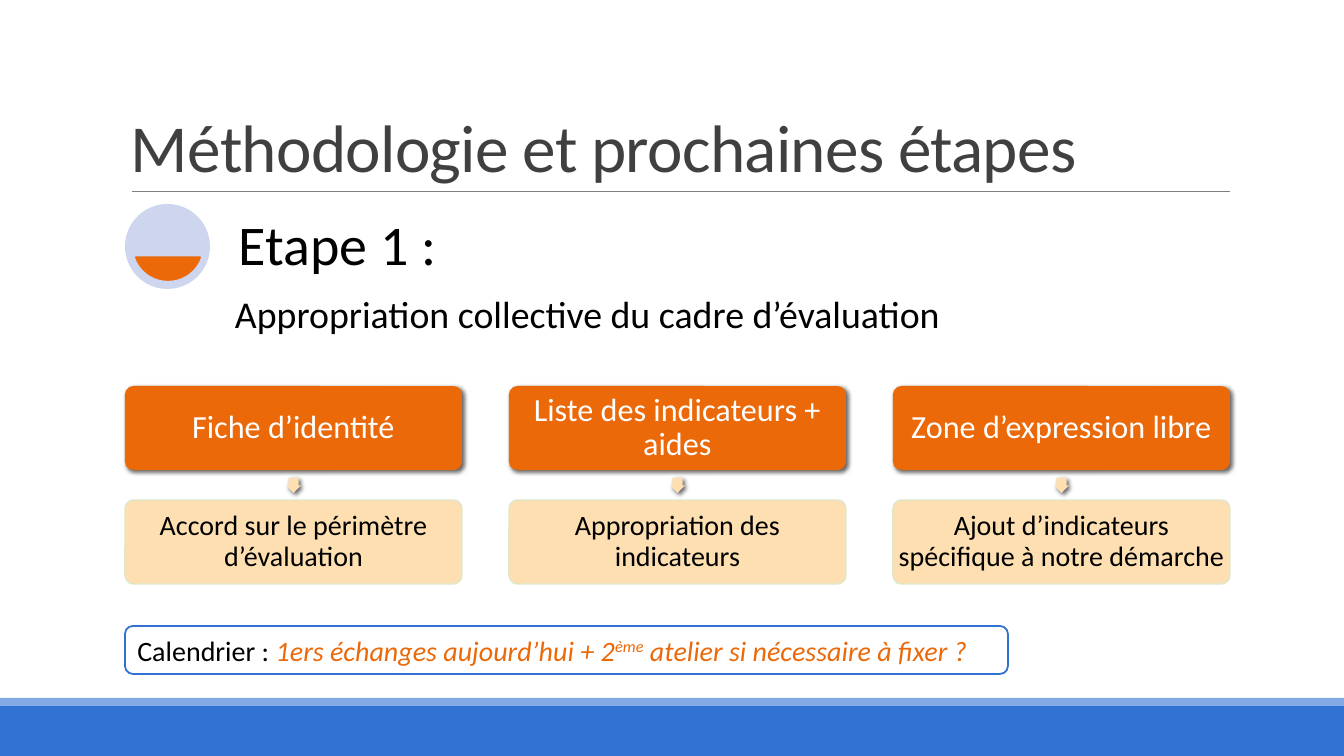
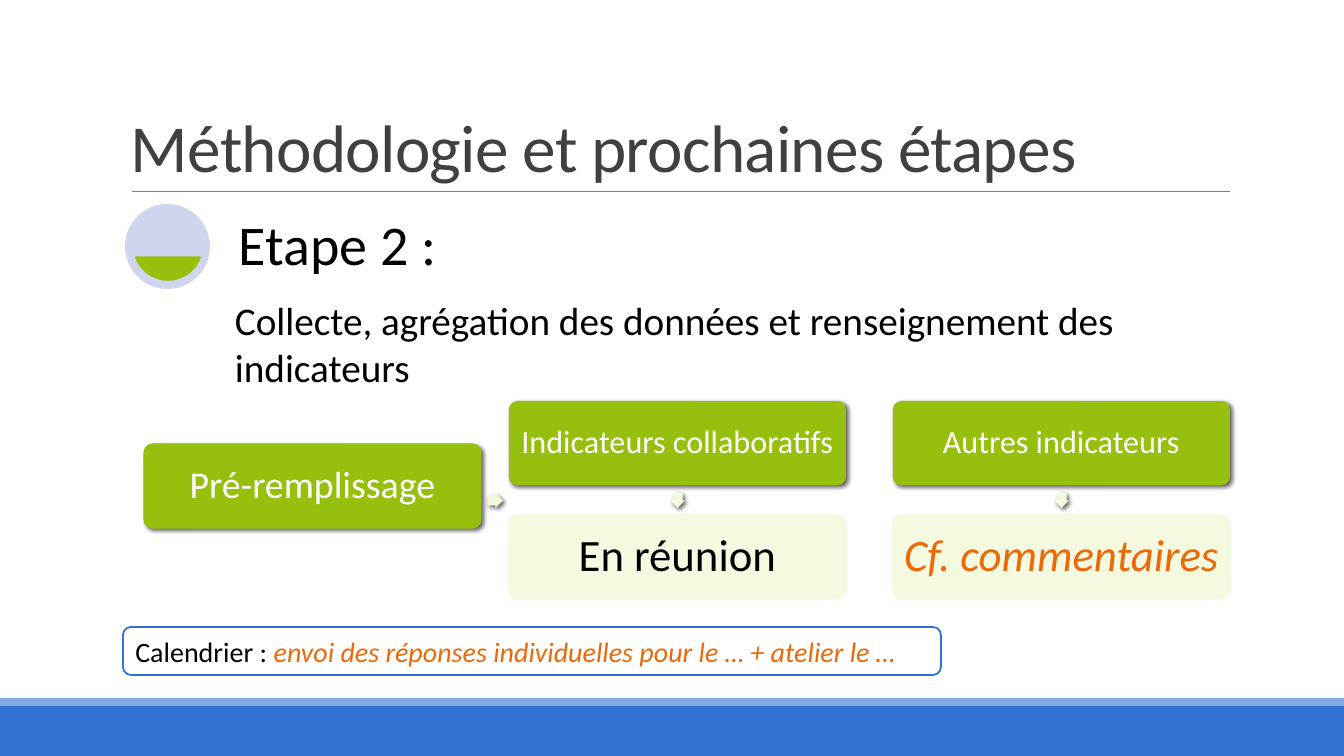
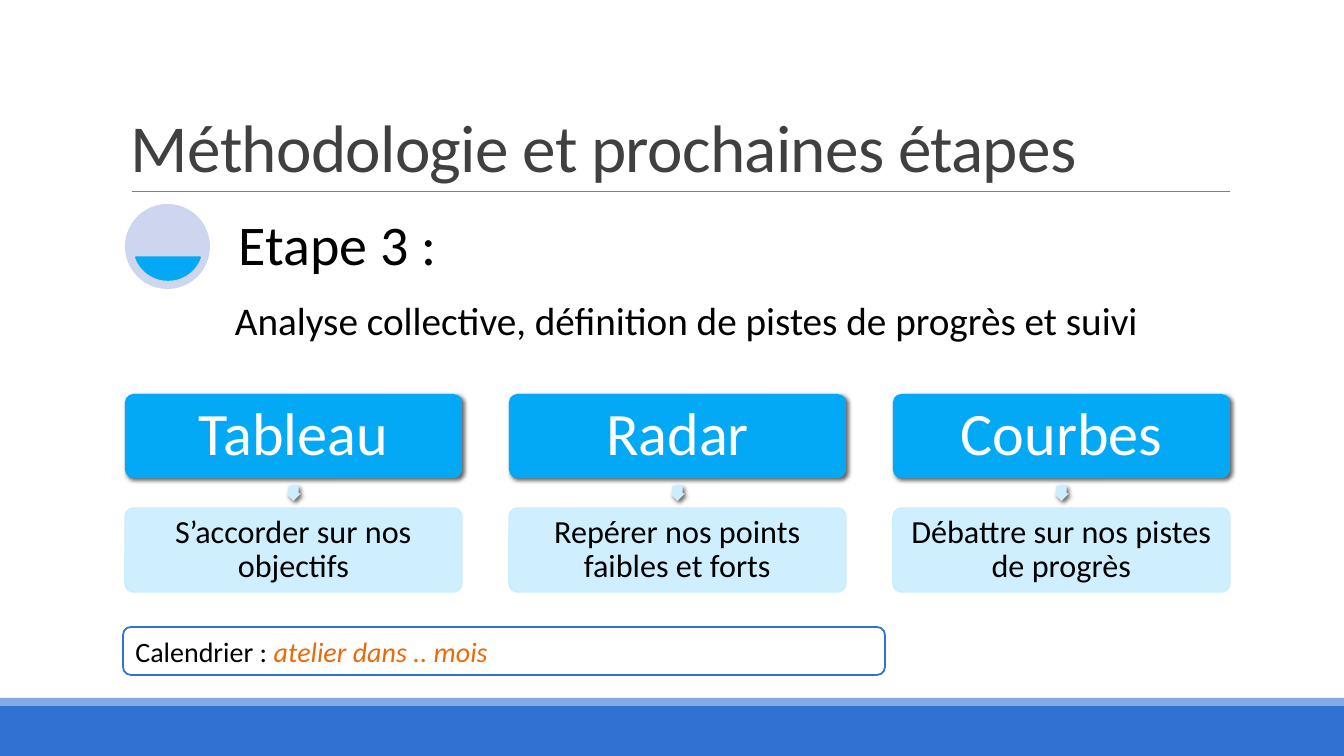
"""Builds three slides that present the steps of an evaluation method."""
from lxml.etree import SubElement
from pptx import Presentation
from pptx.dml.color import RGBColor
from pptx.enum.shapes import MSO_CONNECTOR, MSO_SHAPE
from pptx.enum.text import MSO_ANCHOR, MSO_AUTO_SIZE, PP_ALIGN
from pptx.oxml.ns import qn
from pptx.util import Pt

SCALE = 12192000 / 1344
FONT = "Calibri"
TITLE = "Méthodologie et prochaines étapes"
COLORS = {
    "band": "3171D2", "stripe": "83AAE4", "rule": "808080", "title": "404040",
    "circle": "CED5EE", "black": "000000", "white": "FFFFFF",
    "orange": "EB6909", "peach": "FDDFB2", "sage": "DDE8CC",
    "green": "97BF0D", "lime": "F3F9DD", "blue": "03A9F4", "sky": "CBEEFE",
}
COLUMN_LEFT, COLUMN_STEP = 125, 384
BOX_WIDTH, BOX_HEIGHT, ARROW_SIZE = 337, 84, 15
ARROW_DROP, DETAIL_DROP = 92, 114

STEPS = [
    {
        "accent": "orange", "pale": "peach", "edge": "sage", "opacity": 100,
        "goal": "Appropriation collective du cadre d’évaluation",
        "goal_size": 27, "goal_spacing": 0.9,
        "top": 386, "first_column": 0, "heading_size": 23, "detail_size": 20,
        "columns": [
            ("Fiche d’identité", "Accord sur le périmètre d’évaluation", "black"),
            ("Liste des indicateurs + aides", "Appropriation des indicateurs", "black"),
            ("Zone d’expression libre",
             "Ajout d’indicateurs spécifique à notre démarche", "black"),
        ],
        "calendar_at": (125, 626, 883, 48),
        "calendar": ["1ers échanges aujourd’hui + 2", "ème",
                     " atelier si nécessaire à fixer ?"],
    },
    {
        "accent": "green", "pale": "lime", "edge": "lime", "opacity": 90,
        "goal": "Collecte, agrégation des données et renseignement des indicateurs",
        "goal_size": 28, "goal_spacing": 1.0,
        "top": 401, "first_column": 1, "heading_size": 23, "detail_size": 32,
        "columns": [
            ("Indicateurs collaboratifs", "En réunion", "black"),
            ("Autres indicateurs", "Cf. commentaires", "orange"),
        ],
        "calendar_at": (123, 627, 818, 48),
        "calendar": ["envoi des réponses individuelles pour le … + atelier le …"],
        "lead": "Pré-remplissage",
    },
    {
        "accent": "blue", "pale": "sky", "edge": "sky", "opacity": 90,
        "goal": "Analyse collective, définition de pistes de progrès et suivi",
        "goal_size": 28, "goal_spacing": 1.0,
        "top": 394, "first_column": 0, "heading_size": 43, "detail_size": 23,
        "columns": [
            ("Tableau", "S’accorder sur nos objectifs", "black"),
            ("Radar", "Repérer nos points faibles et forts", "black"),
            ("Courbes", "Débattre sur nos pistes de progrès", "black"),
        ],
        "calendar_at": (123, 627, 762, 48),
        "calendar": ["atelier dans .. mois"],
    },
]


def draw(page, kind, at, fill, line=None, width=1.25, shadow=False, opacity=100):
    """Adds a filled preset shape, its place given in px."""
    shape = page.shapes.add_shape(kind, *[round(length * SCALE) for length in at])
    shape.fill.solid()
    shape.fill.fore_color.rgb = RGBColor.from_string(COLORS[fill])
    if opacity < 100:
        color = shape.element.spPr.find(qn("a:solidFill"))[0]
        SubElement(color, qn("a:alpha"), val=str(opacity * 1000))
    if line:
        shape.line.color.rgb = RGBColor.from_string(COLORS[line])
        shape.line.width = Pt(width)
    else:
        shape.line.fill.background()
    shape.shadow.inherit = False
    if shadow:
        effects = shape.element.spPr.find(qn("a:effectLst"))
        outer = SubElement(effects, qn("a:outerShdw"), blurRad=str(Pt(3)),
                           dist=str(Pt(2)), dir="2700000", algn="tl", rotWithShape="0")
        color = SubElement(outer, qn("a:srgbClr"), val=COLORS["black"])
        SubElement(color, qn("a:alpha"), val="60000")
    return shape


def write(shape, text, size, color, align=PP_ALIGN.LEFT, anchor=MSO_ANCHOR.TOP,
          inset=10, spacing=0.9):
    """Fills a shape with one formatted paragraph and returns it."""
    frame = shape.text_frame
    frame.word_wrap = True
    frame.auto_size = MSO_AUTO_SIZE.NONE
    frame.vertical_anchor = anchor
    frame.margin_left = frame.margin_right = round(inset * SCALE)
    frame.margin_top = frame.margin_bottom = round(min(inset, 5) * SCALE)
    if anchor == MSO_ANCHOR.BOTTOM or inset == 7:
        frame.margin_top = frame.margin_bottom = round(inset * SCALE)
    para = frame.paragraphs[0]
    para.alignment = align
    para.line_spacing = spacing
    para.font.name = FONT
    para.font.size = Pt(size)
    para.font.color.rgb = RGBColor.from_string(COLORS[color])
    para.add_run().text = text
    return para


deck = Presentation()
deck.slide_width = round(1344 * SCALE)
deck.slide_height = round(756 * SCALE)
layout = deck.slide_layouts[5]
pages = [deck.slides.add_slide(layout) for step in STEPS]

band = draw(pages[0], MSO_SHAPE.RECTANGLE, (0, 706, 1344, 50), "band")
stripe = draw(pages[0], MSO_SHAPE.RECTANGLE, (0, 698, 1344, 8), "stripe")
rule = pages[0].shapes.add_connector(
    MSO_CONNECTOR.STRAIGHT, *[round(length * SCALE) for length in (132, 191, 1230, 191)])
rule.line.color.rgb = RGBColor.from_string(COLORS["rule"])
rule.line.width = Pt(0.5)
SubElement(rule.element.spPr, qn("a:effectLst"))
for number, shared in enumerate((band, stripe, rule), start=20):
    shared.element.xpath("./*/p:cNvPr")[0].set("id", str(number))
    layout.shapes.element.append(shared.element)

for number, (page, step) in enumerate(zip(pages, STEPS), start=1):
    accent, pale, top = step["accent"], step["pale"], step["top"]

    title = page.shapes.title
    title.left, title.top, title.width, title.height = [
        round(length * SCALE) for length in (121, 31, 1109, 160)]
    para = write(title, TITLE, 48, "title", anchor=MSO_ANCHOR.BOTTOM, spacing=0.85)
    title.text_frame.margin_top = title.text_frame.margin_bottom = round(5 * SCALE)
    para.runs[0].font.size = Pt(48)
    para.runs[0].font.element.set("spc", "-50") if hasattr(
        para.runs[0].font, "element") else para.runs[0]._r.get_or_add_rPr().set("spc", "-50")

    draw(page, MSO_SHAPE.OVAL, (125, 204, 85, 85), "circle")
    level = draw(page, MSO_SHAPE.CHORD, (134, 212, 68, 68), accent, accent)
    level.adjustments[0], level.adjustments[1] = 11.68, 96.32

    name_box = page.shapes.add_textbox(
        *[round(length * SCALE) for length in (228, 204, 252, 85)])
    write(name_box, f"Etape {number} :", 40, "black", anchor=MSO_ANCHOR.BOTTOM, inset=11)
    goal_box = page.shapes.add_textbox(
        *[round(length * SCALE) for length in (228, 289, 1006, 372)])
    write(goal_box, step["goal"], step["goal_size"], "black", inset=7,
          spacing=step["goal_spacing"])

    for column, (heading, detail, detail_color) in enumerate(
            step["columns"], start=step["first_column"]):
        left = COLUMN_LEFT + column * COLUMN_STEP
        heading_box = draw(page, MSO_SHAPE.ROUNDED_RECTANGLE,
                           (left, top, BOX_WIDTH, BOX_HEIGHT), accent, shadow=True)
        arrow = draw(page, MSO_SHAPE.RIGHT_ARROW,
                     (left + (BOX_WIDTH - ARROW_SIZE) // 2, top + ARROW_DROP,
                      ARROW_SIZE, ARROW_SIZE), pale, shadow=True)
        arrow.rotation = 90
        arrow.adjustments[0] = 0.67
        detail_box = draw(page, MSO_SHAPE.ROUNDED_RECTANGLE,
                          (left, top + DETAIL_DROP, BOX_WIDTH, BOX_HEIGHT), pale,
                          step["edge"], 1, opacity=step["opacity"])
        heading_box.adjustments[0] = detail_box.adjustments[0] = 0.1
        write(heading_box, heading, step["heading_size"], "white",
              PP_ALIGN.CENTER, MSO_ANCHOR.MIDDLE, 3)
        para = write(detail_box, detail, step["detail_size"], detail_color,
                     PP_ALIGN.CENTER, MSO_ANCHOR.MIDDLE, 3)
        para.font.italic = detail_color == "orange"

    calendar = draw(page, MSO_SHAPE.ROUNDED_RECTANGLE, step["calendar_at"], "white", "band")
    para = write(calendar, "Calendrier : ", 20, "black", spacing=1.0)
    for text in step["calendar"]:
        span = para.add_run()
        span.text = text
        span.font.italic = True
        span.font.color.rgb = RGBColor.from_string(COLORS["orange"])
        if text == "ème":
            span._r.get_or_add_rPr().set("baseline", "30000")

    if "lead" in step:
        lead_box = draw(page, MSO_SHAPE.ROUNDED_RECTANGLE,
                        (144, 444, BOX_WIDTH, BOX_HEIGHT), accent, accent, 0.75, shadow=True)
        lead_box.adjustments[0] = 0.1
        write(lead_box, step["lead"], 27, "white", PP_ALIGN.CENTER, MSO_ANCHOR.MIDDLE, 3)
        lead_arrow = draw(page, MSO_SHAPE.RIGHT_ARROW,
                          (488, 493, ARROW_SIZE, ARROW_SIZE), pale, shadow=True)
        lead_arrow.adjustments[0] = 0.67

deck.save("out.pptx")
